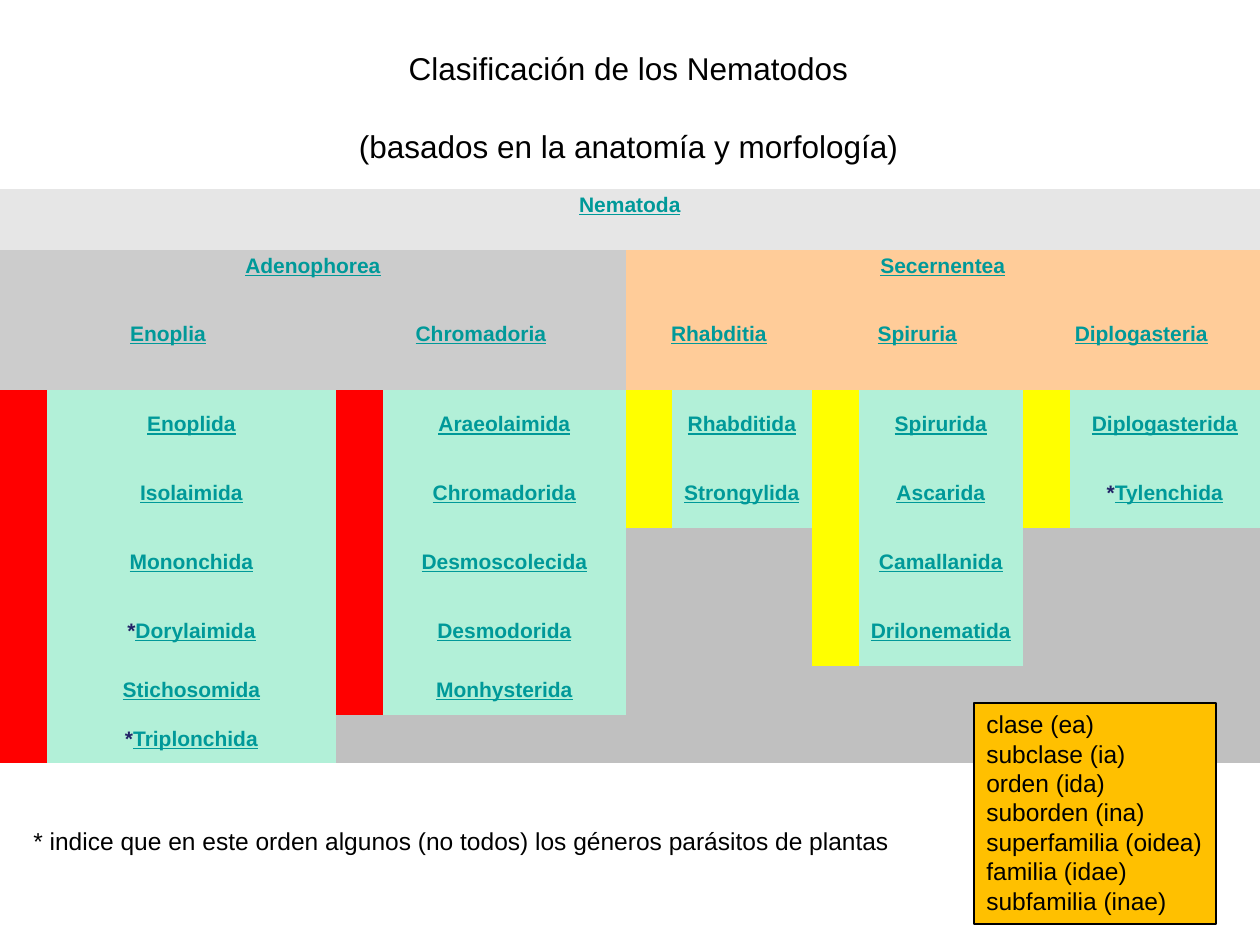
from pptx import Presentation
from pptx.dml.color import RGBColor
from pptx.enum.shapes import MSO_SHAPE
from pptx.enum.text import MSO_ANCHOR, MSO_AUTO_SIZE, PP_ALIGN
from pptx.util import Pt

PX = 9144000 // 1260
TITLE = ["Clasificación de los Nematodos", "(basados en la anatomía y morfología)"]
NOTE = "* indice que en este orden algunos (no todos) los géneros parásitos de plantas"
RANKS = ["clase (ea)", "subclase (ia)", "orden (ida)", "suborden (ina)",
         "superfamilia (oidea)", "familia (idae)", "subfamilia (inae)"]
PHYLUM = "Nematoda"
CLASSES = [
    ("Adenophorea", "CCCCCC", "FF0000", [
        ("Enoplia", ["Enoplida", "Isolaimida", "Mononchida", "*Dorylaimida",
                     "Stichosomida", "*Triplonchida"]),
        ("Chromadoria", ["Araeolaimida", "Chromadorida", "Desmoscolecida",
                         "Desmodorida", "Monhysterida"]),
    ]),
    ("Secernentea", "FFCC99", "FFFF00", [
        ("Rhabditia", ["Rhabditida", "Strongylida"]),
        ("Spiruria", ["Spirurida", "Ascarida", "Camallanida", "Drilonematida"]),
        ("Diplogasteria", ["Diplogasterida", "*Tylenchida"]),
    ]),
]
COLS = [47, 289, 47, 243, 46, 140, 47, 164, 47, 190]
ROWS = [32, 29, 32, 28, 48, 32, 69, 69, 69, 69, 49, 48]
HEAD = 6
TEAL, NAVY, MINT, GREY, PALE = "009999", "222267", "B2F0D8", "C0C0C0", "E6E6E6"


def hue(code):
    return RGBColor.from_string(code)


def place(x, y, w, h):
    return [n * PX for n in (x, y, w, h)]


def style(par, size, bold=False):
    par.font.name, par.font.size, par.font.bold = "Arial", Pt(size), bold


def write(frame, lines, size, align=PP_ALIGN.LEFT):
    frame.auto_size = MSO_AUTO_SIZE.NONE
    frame.vertical_anchor = MSO_ANCHOR.TOP
    frame.text = "\n".join(lines)
    for par in frame.paragraphs:
        par.alignment = align
        style(par, size)
        par.font.color.rgb = hue("000000")


def paint(cell, fill, text=""):
    cell.fill.solid()
    cell.fill.fore_color.rgb = hue(fill)
    cell.vertical_anchor = MSO_ANCHOR.MIDDLE
    cell.margin_left = cell.margin_right = 6 * PX
    cell.margin_top = cell.margin_bottom = 4 * PX
    par = cell.text_frame.paragraphs[0]
    par.alignment = PP_ALIGN.CENTER
    style(par, 12 if text else 8, True)
    if not text:
        par._p.get_or_add_endParaRPr().set("sz", "800")
        return
    name = text.lstrip("*")
    if name != text:
        star = par.add_run()
        star.text = "*"
        star.font.color.rgb = hue(NAVY)
    run = par.add_run()
    run.text = name
    run.font.color.rgb = hue(TEAL)
    run.font.underline = True


def band(grid, row, col, span, fill, text):
    for r, words in ((row, text), (row + 1, "")):
        for c in range(col, col + span):
            paint(grid.cell(r, c), fill, words if c == col else "")
        grid.cell(r, col).merge(grid.cell(r, col + span - 1))


def chart(slide):
    box = place(0, 189, sum(COLS), sum(ROWS))
    grid = slide.shapes.add_table(len(ROWS), len(COLS), *box).table
    grid.first_row = grid.horz_banding = False
    grid._tbl.tblPr[0].text = "{2D5ABB26-0587-4C30-8999-92F81FD0307C}"
    for col, wide in zip(grid.columns, COLS):
        col.width = wide * PX
    for row, high in zip(grid.rows, ROWS):
        row.height = high * PX
    band(grid, 0, 0, len(COLS), PALE, PHYLUM)
    col = 0
    for name, fill, stripe, subs in CLASSES:
        band(grid, 2, col, 2 * len(subs), fill, name)
        for sub, orders in subs:
            band(grid, 4, col, 2, fill, sub)
            for i in range(len(ROWS) - HEAD):
                used = i < len(orders)
                paint(grid.cell(HEAD + i, col), stripe if used else GREY)
                paint(grid.cell(HEAD + i, col + 1), MINT if used else GREY,
                      orders[i] if used else "")
            col += 2


def main():
    deck = Presentation()
    deck.slide_width, deck.slide_height = 1260 * PX, 945 * PX
    slide = deck.slides.add_slide(deck.slide_layouts[5])
    chart(slide)

    title = slide.shapes.title
    title.left, title.top, title.width, title.height = place(344, 43, 569, 127)
    write(title.text_frame, TITLE, 18, PP_ALIGN.CENTER)
    title.text_frame.paragraphs[1].space_before = Pt(22.7)

    key = slide.shapes.add_shape(MSO_SHAPE.RECTANGLE, *place(974, 703, 242, 221))
    key.shadow.inherit = False
    key.fill.solid()
    key.fill.fore_color.rgb = hue("FFC000")
    key.line.color.rgb = hue("000000")
    key.line.width = Pt(1)
    write(key.text_frame, RANKS, 14)
    key.text_frame.word_wrap = False
    for par in key.text_frame.paragraphs:
        par.line_spacing = Pt(16.8)

    note = slide.shapes.add_textbox(*place(21, 820, 935, 43))
    write(note.text_frame, [NOTE], 14)
    note.text_frame.word_wrap = True
    deck.save("out.pptx")


if __name__ == "__main__":
    main()
